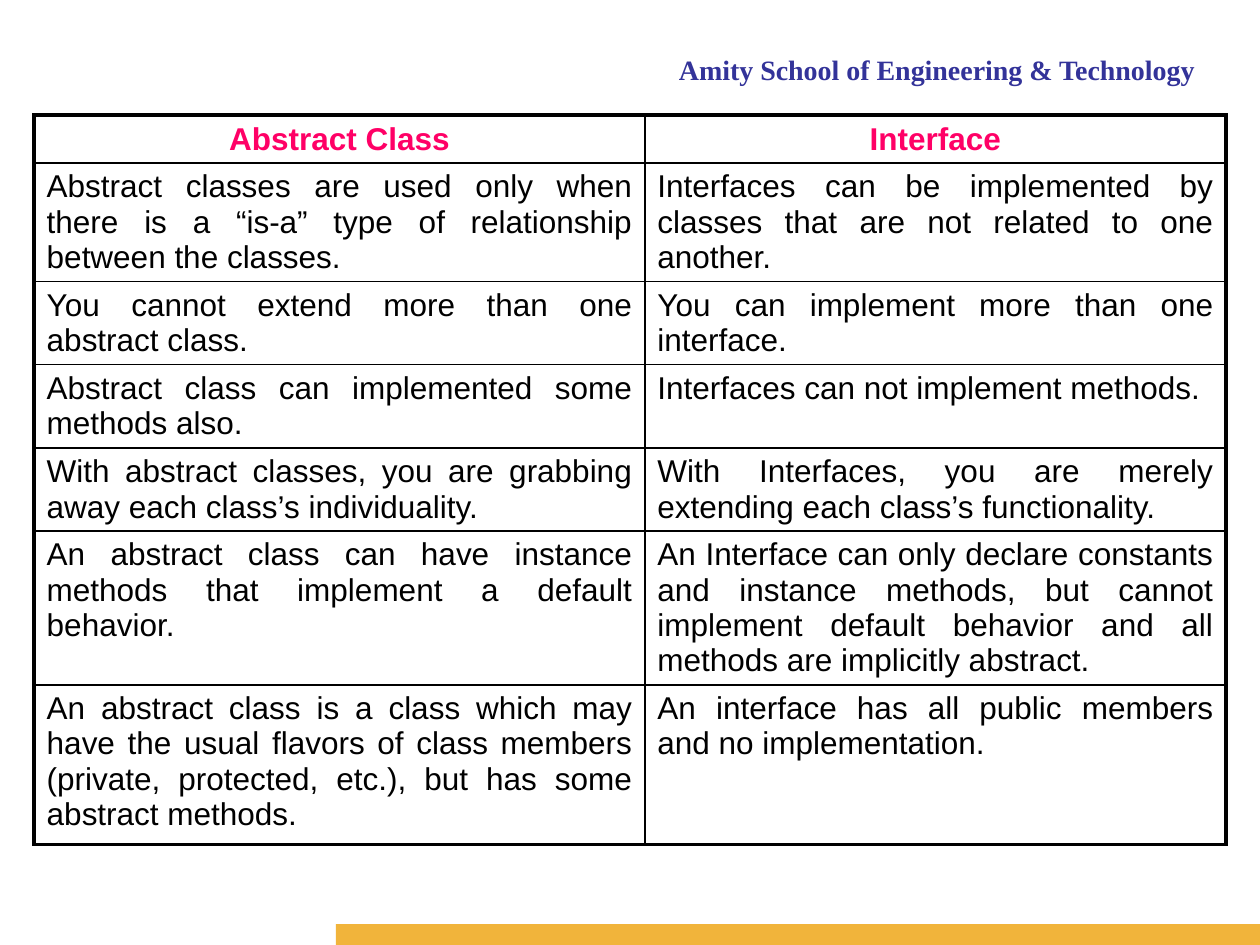
from lxml.etree import SubElement as Sub
from pptx import Presentation as Deck
from pptx.dml.color import RGBColor
from pptx.enum.shapes import MSO_SHAPE as Kind
from pptx.enum.text import MSO_ANCHOR as Anchor, PP_ALIGN as Align
from pptx.oxml.ns import qn
from pptx.util import Pt

ROWS = [
    ("Abstract Class", "Interface"),
    ("Abstract classes are used only when there is a “is-a” type of relationship between the classes.",
     "Interfaces can be implemented by classes that are not related to one another."),
    ("You cannot extend more than one abstract class.",
     "You can implement more than one interface."),
    ("Abstract class can implemented some methods also.",
     "Interfaces can not implement methods."),
    ("With abstract classes, you are grabbing away each class’s individuality.",
     "With Interfaces, you are merely extending each class’s functionality."),
    ("An abstract class can have instance methods that implement a default behavior.",
     "An Interface can only declare constants and instance methods, but cannot implement "
     "default behavior and all methods are implicitly abstract."),
    ("An abstract class is a class which may have the usual flavors of class members "
     "(private, protected, etc.), but has some abstract methods.",
     "An interface has all public members and no implementation."),
]
WIDTHS = [349, 332]
HEIGHTS = [27.3, 67.5, 47.4, 47.4, 47.4, 87.6, 91.4]


def hue(code):
    return RGBColor.from_string(code)


class Page:
    ink = "000000"
    pink = "FF0066"
    blue = "333399"
    gold = "F1B43B"
    sans = "Arial"
    serif = "Times New Roman"
    thin = 1
    thick = 2.25

    def __init__(self, deck):
        self.slide = deck.slides.add_slide(deck.slide_layouts[5])

    def label(self, frame, text, face, size, color, bold, align):
        frame.text = text
        line = frame.paragraphs[0]
        line.alignment = align
        font = line.runs[0].font
        font.name, font.size, font.bold = face, Pt(size), bold
        font.color.rgb = hue(color)

    def title(self, text, x, y, w, h):
        box = self.slide.shapes.title
        box.left, box.top, box.width, box.height = Pt(x), Pt(y), Pt(w), Pt(h)
        frame = box.text_frame
        frame.word_wrap = True
        frame.vertical_anchor = Anchor.TOP
        frame.margin_top, frame.margin_bottom = Pt(6), Pt(0)
        self.label(frame, text, self.serif, 16, self.blue, True, Align.RIGHT)

    def bar(self, x, y, w, h):
        shape = self.slide.shapes.add_shape(Kind.RECTANGLE, Pt(x), Pt(y), Pt(w), Pt(h))
        shape.shadow.inherit = False
        shape.fill.solid()
        shape.fill.fore_color.rgb = hue(self.gold)
        shape.line.fill.background()

    def edge(self, cell, side, width):
        line = Sub(cell._tc.get_or_add_tcPr(), qn("a:ln" + side), w=str(Pt(width)))
        fill = Sub(line, qn("a:solidFill"))
        Sub(fill, qn("a:srgbClr"), val=self.ink)

    def table(self, rows, x, y, widths, heights):
        last, end = len(rows) - 1, len(widths) - 1
        grid = self.slide.shapes.add_table(
            len(rows), len(widths), Pt(x), Pt(y), Pt(sum(widths)), Pt(sum(heights))
        ).table
        grid.first_row = grid.horz_banding = False
        for col, width in zip(grid.columns, widths):
            col.width = Pt(width)
        for r, (row, height) in enumerate(zip(rows, heights)):
            grid.rows[r].height = Pt(height)
            head = r == 0
            for c, text in enumerate(row):
                cell = grid.cell(r, c)
                outer = {"L": c == 0, "R": c == end, "T": head, "B": r == last}
                for side, rim in outer.items():
                    self.edge(cell, side, self.thick if rim else self.thin)
                cell.fill.background()
                self.label(cell.text_frame, text, self.sans, 18,
                           self.pink if head else self.ink, head,
                           Align.CENTER if head else Align.JUSTIFY)


def main():
    deck = Deck()
    deck.slide_width, deck.slide_height = Pt(720), Pt(540)
    page = Page(deck)
    page.title("Amity School of Engineering & Technology", 324, 24, 366, 24)
    page.bar(192, 528, 528, 12)
    page.table(ROWS, 19.5, 65.8, WIDTHS, HEIGHTS)
    deck.save("out.pptx")


if __name__ == "__main__":
    main()
